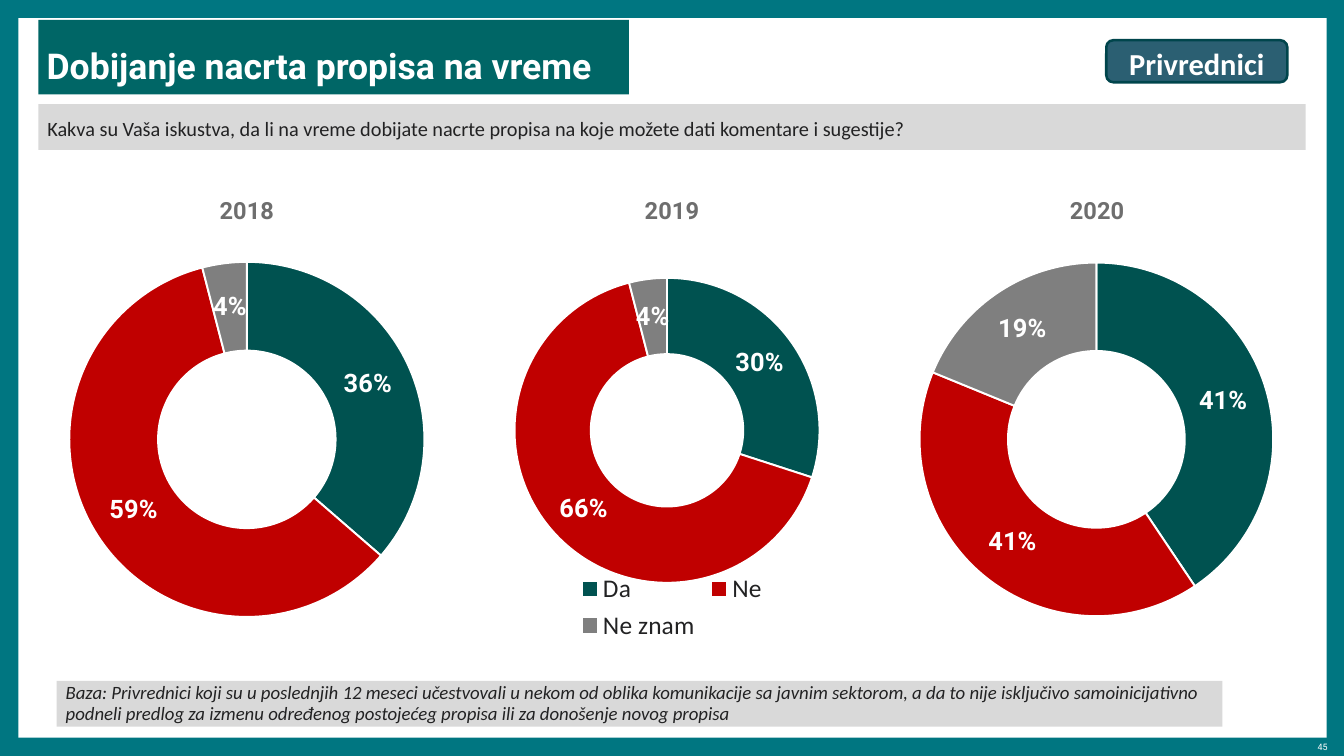
import pptx
import pptx.chart.data
import pptx.dml.color
import pptx.enum.chart
import pptx.enum.shapes
import pptx.enum.text
import pptx.oxml
import pptx.util
from pptx.oxml.ns import qn

WIDTH, HEIGHT = 14.7, 8.27
COLORS = {
    "teal": "007681", "title": "006666", "white": "FFFFFF", "grey": "D9D9D9",
    "ink": "222223", "badge": "2B5F72", "badge_line": "00454C",
    "year": "6E6E6E", "Da": "005250", "Ne": "C00000", "Ne znam": "7F7F7F",
}
ANSWERS = ("Da", "Ne", "Ne znam")
RESULTS = {"2018": (36, 59, 4), "2019": (30, 66, 4), "2020": (41, 41, 19)}
LEGEND_YEAR = "2019"
PLOT_SHARES = {"x": 0.086, "y": 0.216, "w": 0.802, "h": 0.649}

SHAPES = pptx.enum.shapes.MSO_SHAPE
ALIGN = pptx.enum.text.PP_ALIGN
Pt = pptx.util.Pt
Inches = pptx.util.Inches


def paint(fill, color):
    fill.solid()
    fill.fore_color.rgb = pptx.dml.color.RGBColor.from_string(COLORS[color])


def format_font(font, color, **values):
    for name, value in values.items():
        setattr(font, name, Pt(value) if name == "size" else value)
    font.color.rgb = pptx.dml.color.RGBColor.from_string(COLORS[color])


def write(frame, text, color, font, margins=(0, 0, 0, 0), para_format=None,
          anchor=pptx.enum.text.MSO_ANCHOR.MIDDLE):
    frame.word_wrap = True
    frame.vertical_anchor = anchor
    for side, margin in zip(("left", "top", "right", "bottom"), margins):
        setattr(frame, "margin_" + side, Inches(margin))
    para = frame.paragraphs[0]
    for name, value in {"alignment": ALIGN.LEFT, **(para_format or {})}.items():
        setattr(para, name, value)
    span = para.add_run()
    span.text = text
    format_font(span.font, color, **font)


def add_panel(page, box, color, kind=SHAPES.RECTANGLE):
    panel = page.shapes.add_shape(kind, *map(Inches, box))
    panel.shadow.inherit = False
    paint(panel.fill, color)
    panel.line.fill.background()
    return panel


def add_frame(page):
    """Teal border around the white page, with the page number."""
    paint(page.background.fill, "teal")
    add_panel(page, (0.2, 0.2, WIDTH - 0.39, HEIGHT - 0.4), "white")
    number = page.shapes.add_textbox(*map(Inches, (13.73, 8.1, 0.79, 0.13)))
    write(number.text_frame, "45", "white", {"size": 7, "name": "Roboto"},
          para_format={"alignment": ALIGN.RIGHT, "line_spacing": 1.1},
          anchor=pptx.enum.text.MSO_ANCHOR.TOP)


def add_title(page, box):
    title = page.shapes.title
    for name, value in zip(("left", "top", "width", "height"), box):
        setattr(title, name, Inches(value))
    paint(title.fill, "title")
    write(title.text_frame, "Dobijanje nacrta propisa na vreme", "white",
          {"size": 28, "name": "Roboto", "bold": True},
          (0.09, 0.08, 0.09, 0), {"line_spacing": Pt(41)})
    title.text_frame.word_wrap = False
    title.text_frame.auto_size = pptx.enum.text.MSO_AUTO_SIZE.SHAPE_TO_FIT_TEXT
    # Bring the title in front of the white page
    page.shapes[-1].element.addnext(title.element)


def add_badge(page, box):
    badge = add_panel(page, box, "badge", SHAPES.ROUNDED_RECTANGLE)
    paint(badge.line.fill, "badge_line")
    badge.line.width = Pt(2)
    write(badge.text_frame, "Privrednici", "white",
          {"size": 24, "name": "Calibri", "bold": True}, (0.04,) * 4,
          {"alignment": ALIGN.CENTER, "line_spacing": 1.1, "space_before": Pt(24)})


def add_note(page, box, text, spacing, **font):
    note = add_panel(page, box, "grey")
    write(note.text_frame, text, "ink", {"name": "Calibri", **font},
          (0.1, 0, 0.1, 0),
          {"line_spacing": spacing, "space_before": Pt(6), "space_after": Pt(6)})


def set_plot_area(chart):
    plot_area = chart.element.find(".//" + qn("c:plotArea"))
    for old in plot_area.findall(qn("c:layout")):
        plot_area.remove(old)
    places = {"layoutTarget": "inner", "xMode": "edge", "yMode": "edge", **PLOT_SHARES}
    parts = "".join(f'<c:{name} val="{value}"/>' for name, value in places.items())
    plot_area.insert(0, pptx.oxml.parse_xml(
        '<c:layout xmlns:c="http://schemas.openxmlformats.org/drawingml/2006/chart">'
        f"<c:manualLayout>{parts}</c:manualLayout></c:layout>"))


def add_doughnut(page, box, year, values):
    data = pptx.chart.data.CategoryChartData()
    data.categories = ANSWERS
    data.add_series(year, values)
    chart = page.shapes.add_chart(
        pptx.enum.chart.XL_CHART_TYPE.DOUGHNUT, *map(Inches, box), data).chart
    format_font(chart.font, "ink", size=10, name="Roboto")
    chart.has_title = True
    span = chart.chart_title.text_frame.paragraphs[0].add_run()
    span.text = year
    format_font(span.font, "year", size=18.6, name="Roboto", bold=True)

    # Slices and labels
    plot = chart.plots[0]
    plot.vary_by_categories = True
    for index, answer in enumerate(ANSWERS):
        point = plot.series[0].points[index]
        paint(point.format.fill, answer)
        paint(point.format.line.fill, "white")
        point.format.line.width = Pt(1.5)
    labels = plot.series[0].data_labels
    for name, value in {"show_value": True, "show_percentage": False,
                        "number_format": '#"%"',
                        "number_format_is_linked": False}.items():
        setattr(labels, name, value)
    format_font(labels.font, "white", size=20, name="Roboto", bold=True)

    # One legend serves all years
    chart.has_legend = year == LEGEND_YEAR
    if chart.has_legend:
        chart.legend.position = pptx.enum.chart.XL_LEGEND_POSITION.BOTTOM
        chart.legend.include_in_layout = False
        format_font(chart.legend.font, "ink", size=20, name="Calibri")
        set_plot_area(chart)


def add_doughnut_row(page, left, top, width, height, step):
    for column, (year, values) in enumerate(RESULTS.items()):
        add_doughnut(page, (left + column * step, top, width, height), year, values)


def main():
    deck = pptx.Presentation()
    deck.slide_width, deck.slide_height = Inches(WIDTH), Inches(HEIGHT)
    page = deck.slides.add_slide(deck.slide_layouts[5])
    add_frame(page)
    add_title(page, (0.42, 0.3, 6.46, 0.65))
    add_doughnut_row(page, 0.62, 1.93, 4.16, 5.14, step=4.65)
    add_note(page, (0.42, 1.14, 13.86, 0.5),
             "Kakva su Vaša iskustva, da li na vreme dobijate nacrte propisa "
             "na koje možete dati komentare i sugestije?", 1.1, size=16)
    add_badge(page, (12.1, 0.44, 1.98, 0.46))
    add_note(page, (0.62, 7.45, 12.75, 0.5),
             "Baza: Privrednici koji su u poslednjih 12 meseci učestvovali u nekom "
             "od oblika komunikacije sa javnim sektorom, a da to nije isključivo "
             "samoinicijativno podneli predlog za izmenu određenog postojećeg "
             "propisa ili za donošenje novog propisa", 0.9, size=14.8, italic=True)
    deck.save("out.pptx")


if __name__ == "__main__":
    main()
